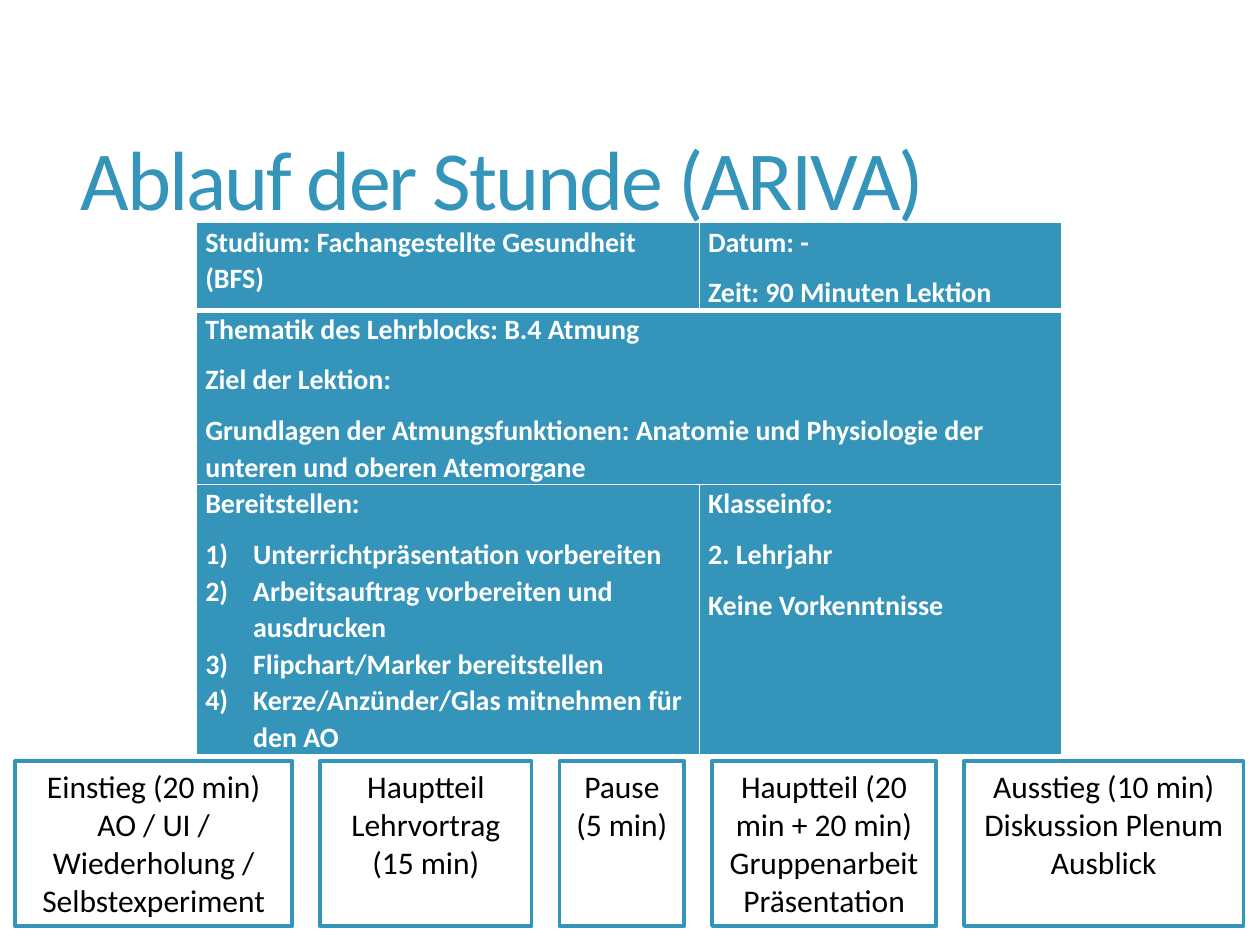
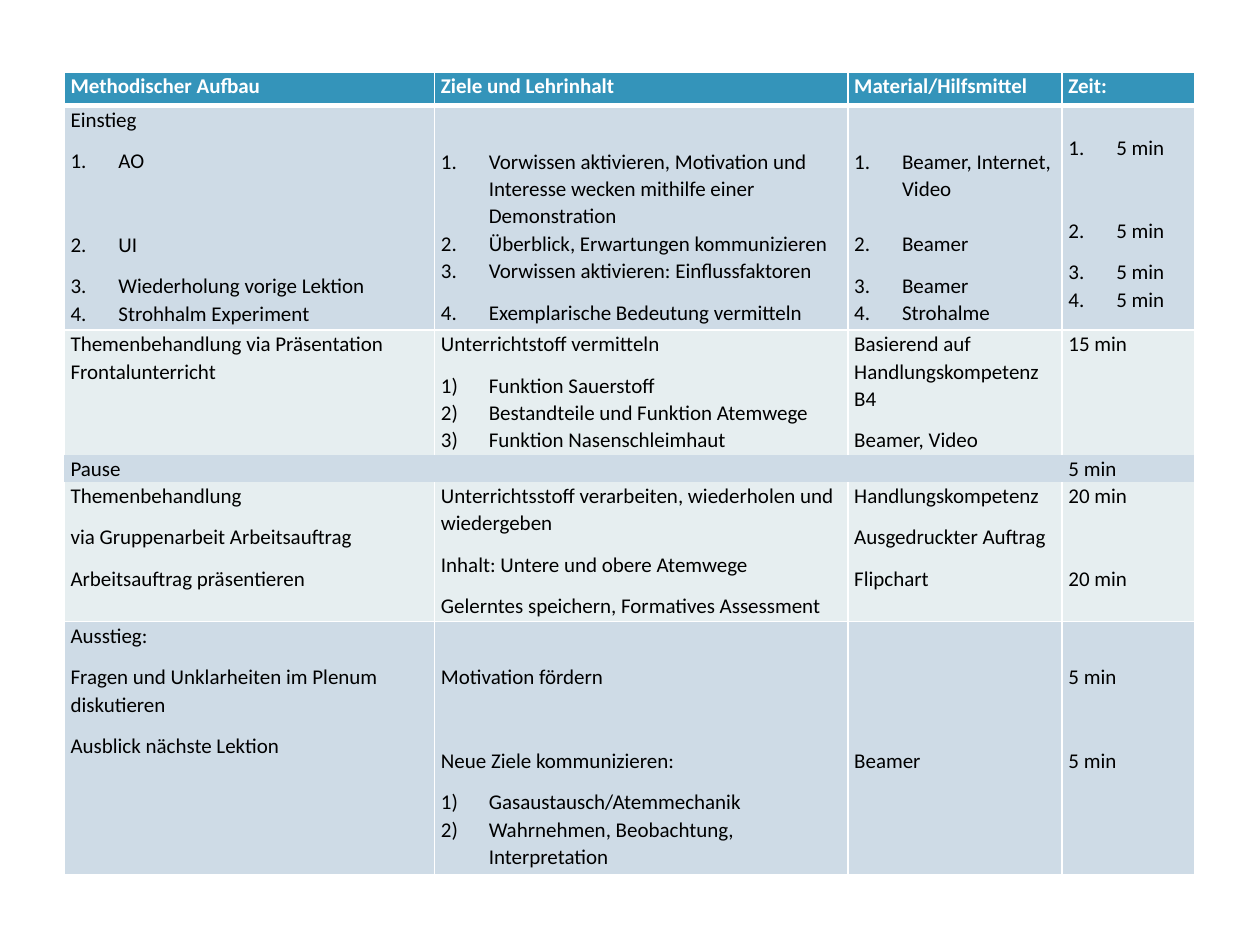
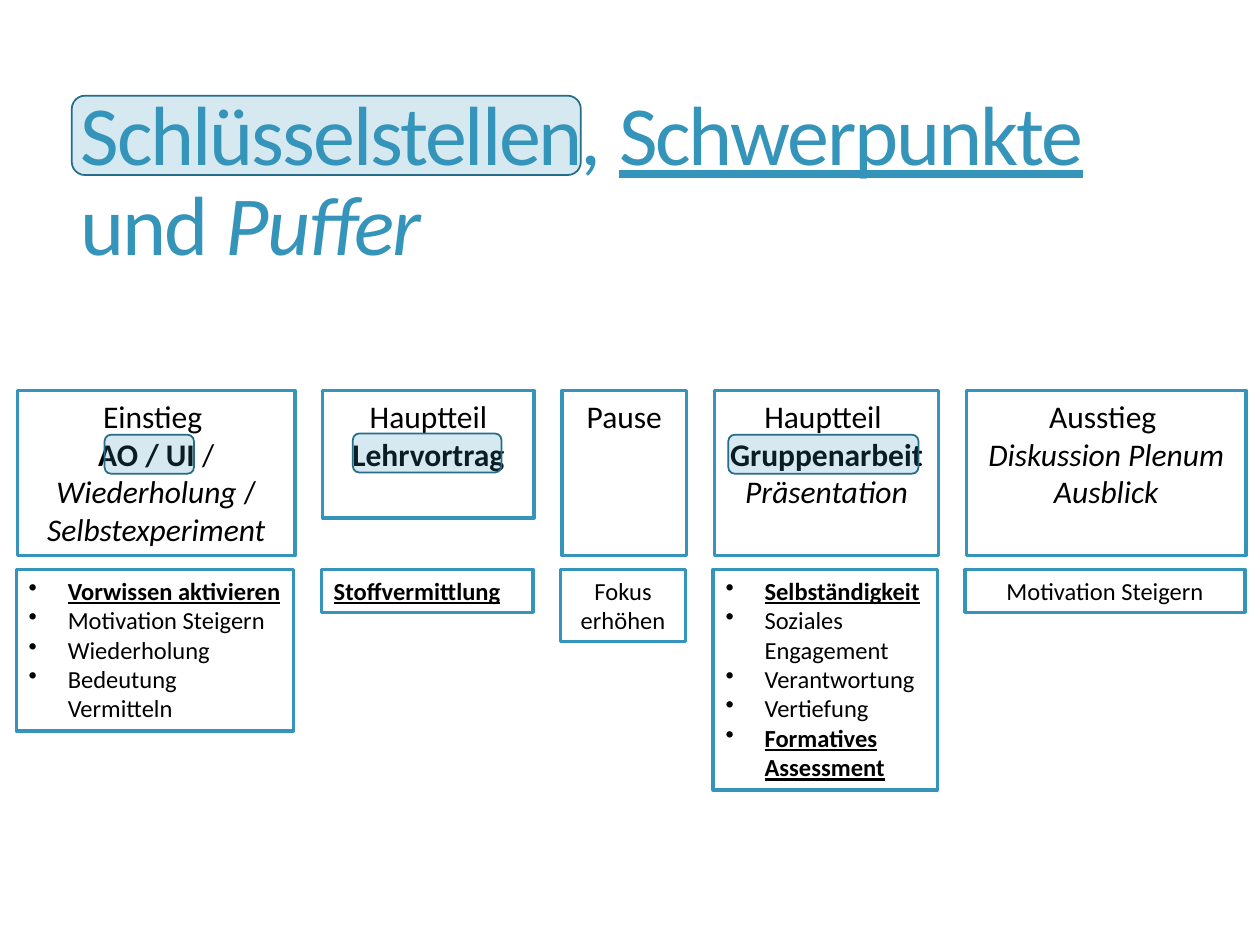
from dataclasses import dataclass
from typing import Any, NamedTuple, Sequence

from lxml import etree
from pptx import Presentation
from pptx import util as u
from pptx.dml.color import RGBColor
from pptx.enum import shapes, text
from pptx.oxml import ns

SCALE = 9144


def px(n: int) -> u.Emu:
    return u.Emu(n * SCALE)


@dataclass(frozen=True)
class Theme:
    font: str = "Calibri"
    blue: str = "3494BA"
    edge: str = "266D8A"
    pale: str = "CEDBE6"
    mist: str = "E6EEF0"
    white: str = "FFFFFF"
    black: str = "000000"
    title: int = 48
    step: int = 18
    goal: int = 14
    info: int = 16
    plan: int = 12


T = Theme()


class Run(NamedTuple):
    text: str
    look: str = ""


@dataclass(frozen=True)
class Para:
    runs: tuple[Run, ...]
    after: int = 8
    mark: str = ""


@dataclass(frozen=True)
class Cell:
    paras: tuple[Para, ...] = ()
    lead: int = 0


@dataclass(frozen=True)
class Style:
    size: int
    color: str = T.black
    bold: bool = False
    align: Any = text.PP_ALIGN.LEFT
    space: float = 1.0
    indent: int = 0
    track: int = 0


class Rect(NamedTuple):
    x: int
    y: int
    w: int
    h: int


class Mark(NamedTuple):
    tag: str
    key: str
    value: str


MARKS = {
    "1.": Mark("a:buAutoNum", "type", "arabicPeriod"),
    "1)": Mark("a:buAutoNum", "type", "arabicParenR"),
    "•": Mark("a:buChar", "char", "•"),
}


def para(*runs: str | Run, after: int = 8, mark: str = "") -> Para:
    return Para(tuple(Run(r) if isinstance(r, str) else r for r in runs), after, mark)


def cell(*items: str | Para, lead: int = 0) -> Cell:
    return Cell(tuple(para(i) if isinstance(i, str) else i for i in items), lead)


def items(mark: str, *pairs: tuple[str, int]) -> list[Para]:
    return [para(t, after=a, mark=mark) for t, a in pairs]


def rgb(code: str) -> RGBColor:
    return RGBColor.from_string(code)


def write(frame: Any, paras: Sequence[Para], style: Style) -> None:
    for i, part in enumerate(paras):
        p = frame.add_paragraph() if i else frame.paragraphs[0]
        p.alignment = style.align
        p.line_spacing = style.space
        p.space_after = u.Pt(part.after)
        if part.mark:
            mark = MARKS[part.mark]
            props = p._p.get_or_add_pPr()
            props.set("marL", str(px(style.indent)))
            props.set("indent", str(-px(style.indent)))
            etree.SubElement(props, ns.qn(mark.tag)).set(mark.key, mark.value)
        p.font.name = T.font
        p.font.size = u.Pt(style.size)
        for word, look in part.runs:
            run = p.add_run()
            run.text = word
            run.font.color.rgb = rgb(style.color)
            run.font.bold = style.bold or "b" in look
            run.font.italic = "i" in look
            run.font.underline = "u" in look
            if style.track:
                run._r.get_or_add_rPr().set("spc", str(style.track))
        if not part.runs:
            end = etree.SubElement(p._p, ns.qn("a:endParaRPr"))
            end.set("sz", str(style.size * 100))


def head(slide: Any, *runs: str | Run) -> None:
    shape = slide.shapes.title
    shape.left, shape.top, shape.width, shape.height = map(px, (54, 55, 884, 181))
    frame = shape.text_frame
    frame.auto_size = text.MSO_AUTO_SIZE.NONE
    frame.vertical_anchor = text.MSO_ANCHOR.MIDDLE
    write(frame, [para(*runs, after=0)], Style(T.title, T.blue, space=0.9, track=-120))


def box(slide: Any, rect: Rect, paras: Sequence[Para], style: Style) -> None:
    shape = slide.shapes.add_textbox(*map(px, rect))
    shape.line.color.rgb = rgb(T.blue)
    shape.line.width = u.Pt(2)
    shape.text_frame.word_wrap = True
    write(shape.text_frame, paras, style)


def glow(slide: Any, rect: Rect) -> None:
    shape = slide.shapes.add_shape(shapes.MSO_SHAPE.ROUNDED_RECTANGLE, *map(px, rect))
    shape.shadow.inherit = False
    shape.fill.solid()
    shape.fill.fore_color.rgb = rgb(T.blue)
    tint = shape.fill._xPr.find(".//" + ns.qn("a:srgbClr"))
    etree.SubElement(tint, ns.qn("a:alpha")).set("val", "20000")
    shape.line.color.rgb = rgb(T.edge)
    shape.line.width = u.Pt(1)


def rule(target: Any, widths: dict[str, int]) -> None:
    props = target._tc.get_or_add_tcPr()
    for i, side in enumerate("LRTB"):
        line = etree.Element(ns.qn(f"a:ln{side}"))
        if widths[side]:
            line.set("w", str(u.Pt(widths[side])))
            fill = etree.SubElement(line, ns.qn("a:solidFill"))
            etree.SubElement(fill, ns.qn("a:srgbClr")).set("val", T.white)
        else:
            etree.SubElement(line, ns.qn("a:noFill"))
        props.insert(i, line)


def grid(slide: Any, x: int, y: int, cols: Sequence[int], rows: Sequence[int],
         cells: Sequence[Sequence[Cell]], fills: Sequence[str], style: Style,
         pad: int, bare: int = -1) -> Any:
    table = slide.shapes.add_table(
        len(rows), len(cols), px(x), px(y), px(sum(cols)), px(sum(rows))).table
    table.horz_banding = False
    for col, w in zip(table.columns, cols):
        col.width = px(w)
    for r, line in enumerate(cells):
        table.rows[r].height = px(rows[r])
        dark = fills[r] == T.blue
        look = Style(style.size, T.white if dark else T.black, dark,
                     space=style.space, indent=style.indent)
        side = 0 if r == bare else 1
        top = 3 if r == 1 else 0 if bare in (r, r - 1) else 1
        low = 3 if r == 0 else 0 if bare in (r, r + 1) else 1
        for c, part in enumerate(line):
            spot = table.cell(r, c)
            spot.margin_left = spot.margin_right = px(pad)
            spot.margin_top, spot.margin_bottom = px(part.lead), 0
            spot.fill.solid()
            spot.fill.fore_color.rgb = rgb(fills[r])
            rule(spot, {"L": side, "R": side, "T": top, "B": low})
            write(spot.text_frame, part.paras or [para()], look)
    return table


WIDTHS = (220, 168, 99, 178, 222)
GAP = 22
CENTER = text.PP_ALIGN.CENTER
STEP = Style(T.step, align=CENTER)
BULLET = Style(T.goal, indent=31)
MIDDLE = Style(T.goal, align=CENTER)


def lanes(start: int) -> list[int]:
    return [start + sum(WIDTHS[:i]) + GAP * i for i in range(len(WIDTHS))]


def steps(slide: Any, start: int, y: int, tall: Sequence[int],
          texts: Sequence[Sequence[Para]]) -> None:
    for x, w, h, paras in zip(lanes(start), WIDTHS, tall, texts):
        box(slide, Rect(x, y, w, h), paras, STEP)


def flat(*runs: str | Run, mark: str = "") -> Para:
    return para(*runs, after=0, mark=mark)


def outline(deck: Any) -> None:
    slide = deck.slides.add_slide(deck.slide_layouts[5])
    head(slide, "Ablauf der Stunde (ARIVA)")
    cells = [
        [cell("Studium: Fachangestellte Gesundheit (BFS)"),
         cell("Datum: -", "Zeit: 90 Minuten Lektion")],
        [cell("Thematik des Lehrblocks: B.4 Atmung", "Ziel der Lektion:",
              "Grundlagen der Atmungsfunktionen: Anatomie und Physiologie der "
              "unteren und oberen Atemorgane"), cell()],
        [cell("Bereitstellen:", *items(
            "1)", ("Unterrichtpräsentation vorbereiten", 0),
            ("Arbeitsauftrag vorbereiten und ausdrucken", 0),
            ("Flipchart/Marker bereitstellen", 0),
            ("Kerze/Anzünder/Glas mitnehmen für den AO", 8))),
         cell("Klasseinfo:", "2. Lehrjahr", "Keine Vorkenntnisse")],
    ]
    table = grid(slide, 156, 177, (399, 288), (63, 124, 191), cells, [T.blue] * 3,
                 Style(T.info, space=1.07, indent=38), 7)
    table.cell(1, 0).merge(table.cell(1, 1))
    steps(slide, 12, 604, [131] * 5, [
        [flat("Einstieg (20 min)"), flat("AO / UI / Wiederholung / Selbstexperiment")],
        [flat("Hauptteil"), flat("Lehrvortrag (15 min)")],
        [flat("Pause"), flat("(5 min)")],
        [flat("Hauptteil (20 min + 20 min)"), flat("Gruppenarbeit"), flat("Präsentation")],
        [flat("Ausstieg (10 min)"), flat("Diskussion Plenum"), flat("Ausblick")],
    ])


def plan(deck: Any) -> None:
    slide = deck.slides.add_slide(deck.slide_layouts[6])
    cells = [
        [cell(t) for t in ("Methodischer Aufbau", "Ziele und Lehrinhalt",
                           "Material/Hilfsmittel", "Zeit:")],
        [cell("Einstieg", *items(
            "1.", ("AO", 32), ("UI", 8), ("Wiederholung vorige Lektion", 0),
            ("Strohhalm Experiment", 8))),
         cell(*items(
             "1.", ("Vorwissen aktivieren, Motivation und Interesse wecken "
                    "mithilfe einer Demonstration", 0),
             ("Überblick, Erwartungen kommunizieren", 0),
             ("Vorwissen aktivieren: Einflussfaktoren", 8),
             ("Exemplarische Bedeutung vermitteln", 8)), lead=33),
         cell(*items("1.", ("Beamer, Internet, Video", 16), ("Beamer", 8),
                     ("Beamer", 0), ("Strohalme", 0)), lead=33),
         cell(*items("1.", ("5 min", 32), ("5 min", 8), ("5 min", 0),
                     ("5 min", 8)), lead=22)],
        [cell("Themenbehandlung via Präsentation Frontalunterricht"),
         cell("Unterrichtstoff vermitteln", *items(
             "1)", ("Funktion Sauerstoff", 0),
             ("Bestandteile und Funktion Atemwege", 0),
             ("Funktion Nasenschleimhaut", 8))),
         cell("Basierend auf Handlungskompetenz B4", "Beamer, Video"),
         cell("15 min")],
        [cell("Pause"), cell(), cell(), cell("5 min")],
        [cell("Themenbehandlung", "via Gruppenarbeit Arbeitsauftrag",
              "Arbeitsauftrag präsentieren"),
         cell("Unterrichtsstoff verarbeiten, wiederholen und wiedergeben",
              "Inhalt: Untere und obere Atemwege",
              "Gelerntes speichern, Formatives Assessment"),
         cell("Handlungskompetenz", "Ausgedruckter Auftrag", "Flipchart"),
         cell(para("20 min", after=32), "20 min")],
        [cell("Ausstieg:", "Fragen und Unklarheiten im Plenum diskutieren",
              "Ausblick nächste Lektion"),
         cell(para("Motivation fördern", after=32), "Neue Ziele kommunizieren:",
              *items("1)", ("Gasaustausch/Atemmechanik", 0),
                     ("Wahrnehmen, Beobachtung, Interpretation", 8)), lead=33),
         cell("Beamer", lead=99),
         cell(para("5 min", after=32), "5 min", lead=33)],
    ]
    fills = [T.blue, T.pale, T.mist, T.pale, T.mist, T.pale]
    grid(slide, 51, 57, (294, 328, 170, 105), (27, 178, 99, 21, 111, 201), cells,
         fills, Style(T.plan, space=1.07, indent=38), 5, bare=3)


def focus(deck: Any) -> None:
    slide = deck.slides.add_slide(deck.slide_layouts[5])
    head(slide, "Schlüsselstellen, ", Run("Schwerpunkte", "u"), " und ",
         Run("Puffer", "i"))
    steps(slide, 14, 310, (131, 101, 131, 131, 131), [
        [flat("Einstieg "),
         flat(Run("AO / UI ", "b"), "/ ", Run("Wiederholung", "i"), " / ",
              Run("Selbstexperiment", "i"))],
        [flat("Hauptteil"), flat(Run("Lehrvortrag", "b"))],
        [flat("Pause")],
        [flat("Hauptteil "), flat(Run("Gruppenarbeit", "b")),
         flat(Run("Präsentation", "i"))],
        [flat("Ausstieg "), flat(Run("Diskussion Plenum", "i")),
         flat(Run("Ausblick", "i"))],
    ])
    goals = [
        (128, BULLET, [Run("Vorwissen aktivieren", "bu"), "Motivation Steigern",
                       "Wiederholung", "Bedeutung Vermitteln"]),
        (34, Style(T.goal), [Run("Stoffvermittlung", "bu")]),
        (57, MIDDLE, ["Fokus erhöhen"]),
        (175, BULLET, [Run("Selbständigkeit", "bu"), "Soziales Engagement",
                       "Verantwortung", "Vertiefung",
                       Run("Formatives Assessment", "bu")]),
        (34, MIDDLE, ["Motivation Steigern"]),
    ]
    for x, w, (h, style, lines) in zip(lanes(13), WIDTHS, goals):
        mark = "•" if style.indent else ""
        box(slide, Rect(x, 452, w, h), [flat(t, mark=mark) for t in lines], style)
    for rect in (Rect(83, 345, 71, 31), Rect(280, 344, 118, 31),
                 Rect(578, 345, 151, 31), Rect(57, 76, 404, 63)):
        glow(slide, rect)


def main() -> None:
    deck = Presentation()
    deck.slide_width, deck.slide_height = px(1000), px(750)
    outline(deck)
    plan(deck)
    focus(deck)
    deck.save("out.pptx")


if __name__ == "__main__":
    main()
